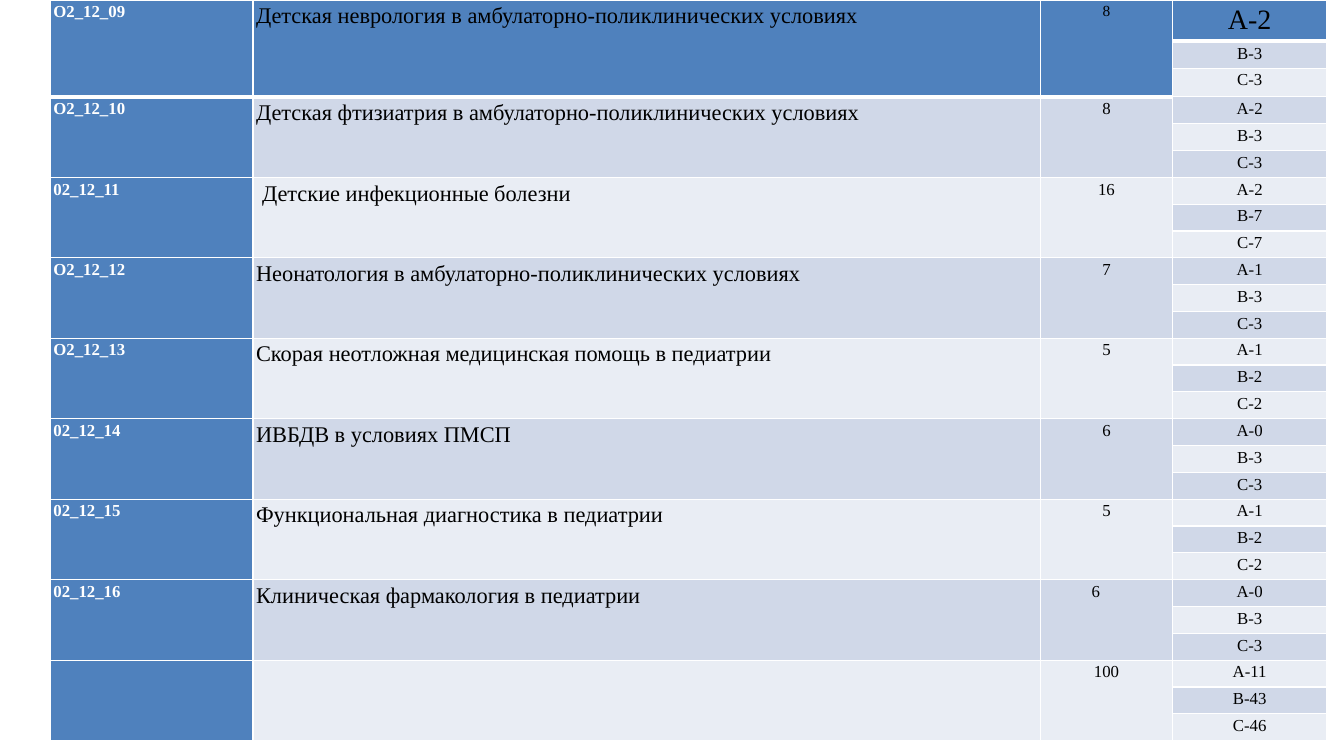
from lxml import etree
from pptx import Presentation
from pptx.dml.color import RGBColor
from pptx.enum.text import PP_ALIGN
from pptx.oxml.ns import qn
from pptx.util import Inches, Pt

COLORS = {"blue": "4F81BD", "dark_band": "D0D8E8", "light_band": "E9EDF4",
          "white": "FFFFFF", "black": "000000"}
FONT = "Times New Roman"
COLUMN_WIDTHS = [2.01, 7.81, 1.31, 1.53]
TABLE_HEIGHT = 7.33
HEADER_HEIGHT = 0.41
LEVELS = "АВС"
SPAN = len(LEVELS)

# code, discipline, total hours, hours for levels А, В, С
COURSES = [
    ("O2_12_09", "Детская неврология в амбулаторно-поликлинических условиях", 8, (2, 3, 3)),
    ("O2_12_10", "Детская фтизиатрия в амбулаторно-поликлинических условиях", 8, (2, 3, 3)),
    ("02_12_11", "Детские инфекционные болезни", 16, (2, 7, 7)),
    ("O2_12_12", "Неонатология в амбулаторно-поликлинических условиях", 7, (1, 3, 3)),
    ("O2_12_13", "Скорая неотложная медицинская помощь в педиатрии", 5, (1, 2, 2)),
    ("02_12_14", "ИВБДВ в условиях ПМСП", 6, (0, 3, 3)),
    ("02_12_15", "Функциональная диагностика в педиатрии", 5, (1, 2, 2)),
    ("02_12_16", "Клиническая фармакология в педиатрии", 6, (0, 3, 3)),
    ("", "", 100, (11, 43, 46)),
]


def add_borders(cell, top, bottom):
    """Draw white cell borders; top and bottom are widths in points."""
    properties = cell._tc.get_or_add_tcPr()
    for side, width in (("L", 1), ("R", 1), ("T", top), ("B", bottom)):
        line = etree.SubElement(properties, qn(f"a:ln{side}"), w=str(Pt(width)))
        fill = etree.SubElement(line, qn("a:solidFill"))
        etree.SubElement(fill, qn("a:srgbClr"), val=COLORS["white"])


def write_cell(cell, text, size, color="black", bold=False, alignment=PP_ALIGN.LEFT):
    paragraph = cell.text_frame.paragraphs[0]
    paragraph.text = text
    paragraph.alignment = alignment
    paragraph.line_spacing = 1.15
    paragraph.font.name = FONT
    paragraph.font.size = Pt(size)
    paragraph.font.bold = bold
    paragraph.font.color.rgb = RGBColor.from_string(COLORS[color])


presentation = Presentation()
presentation.slide_width = Inches(13.33)
presentation.slide_height = Inches(7.5)
slide = presentation.slides.add_slide(presentation.slide_layouts[6])

row_count = len(COURSES) * SPAN
table = slide.shapes.add_table(
    row_count, len(COLUMN_WIDTHS), Inches(0.5), Inches(0),
    Inches(sum(COLUMN_WIDTHS)), Inches(TABLE_HEIGHT)).table
for column, width in zip(table.columns, COLUMN_WIDTHS):
    column.width = Inches(width)
for row in table.rows:
    row.height = Inches((TABLE_HEIGHT - HEADER_HEIGHT) / (row_count - 1))
table.rows[0].height = Inches(HEADER_HEIGHT)

# Bands, borders and insets
for row_index in range(row_count):
    for column_index in range(len(COLUMN_WIDTHS)):
        cell = table.cell(row_index, column_index)
        is_level = column_index == 3
        band_row = row_index if is_level else row_index - row_index % SPAN
        header_end = 0 if is_level else SPAN - 1
        add_borders(cell, top=3 if row_index == header_end + 1 else 1,
                    bottom=3 if row_index <= header_end else 1)
        if column_index == 0 or band_row == 0:
            band = "blue"
        else:
            band = "dark_band" if band_row % 2 else "light_band"
        cell.fill.solid()
        cell.fill.fore_color.rgb = RGBColor.from_string(COLORS[band])
        cell.margin_left = cell.margin_right = Inches(0.03)
        cell.margin_top = cell.margin_bottom = 0
        cell.text_frame.paragraphs[0].font.size = Pt(12)

# Course texts
for course_index, (code, discipline, total, hours) in enumerate(COURSES):
    first_row = course_index * SPAN
    code_cell, discipline_cell, total_cell = [
        table.cell(first_row, column_index) for column_index in range(3)]
    for column_index, cell in enumerate((code_cell, discipline_cell, total_cell)):
        cell.merge(table.cell(first_row + SPAN - 1, column_index))
    if code:
        write_cell(code_cell, code, 12, "white", bold=True)
        write_cell(discipline_cell, discipline, 16)
    write_cell(total_cell, str(total), 12 if course_index else 11,
               alignment=PP_ALIGN.CENTER)
    if code == "02_12_11":
        discipline_cell.margin_left = Inches(0.09)
    if code == "02_12_16":
        total_cell.margin_right = Inches(0.24)
    for offset, (level, count) in enumerate(zip(LEVELS, hours)):
        row_index = first_row + offset
        write_cell(table.cell(row_index, 3), f"{level}-{count}",
                   12 if row_index else 20, alignment=PP_ALIGN.CENTER)

presentation.save("out.pptx")
